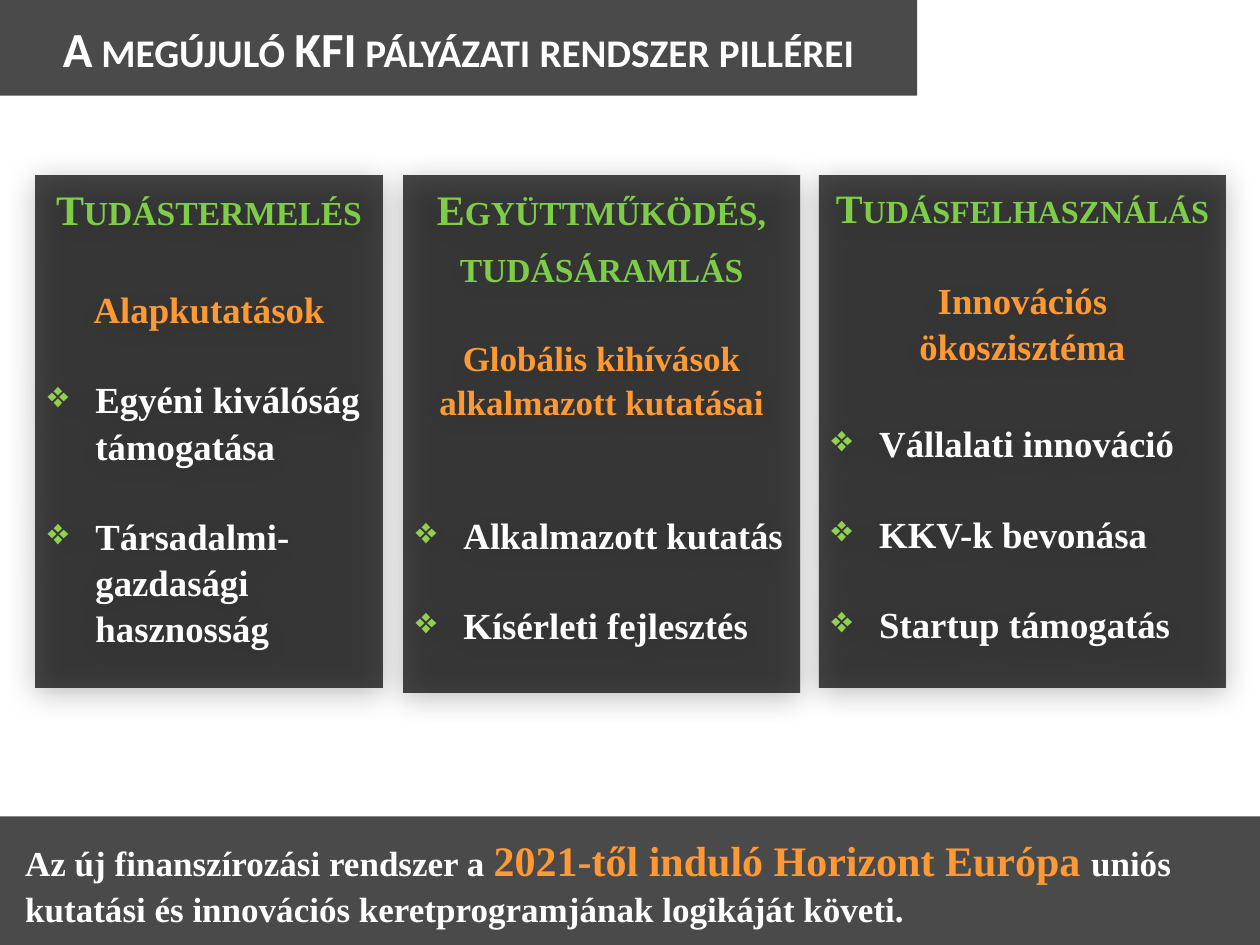
from lxml.etree import SubElement
from pptx import Presentation
from pptx.dml.color import RGBColor
from pptx.enum.shapes import MSO_SHAPE
from pptx.enum.text import MSO_ANCHOR, PP_ALIGN
from pptx.oxml.ns import qn
from pptx.util import Inches, Pt

COLORS = {"panel": "000000", "white": "FFFFFF", "green": "7DCE46",
          "orange": "FF9933", "bullet": "92D050"}
SERIF, SANS = "Times New Roman", "Calibri"

TITLE = "A megújuló KFI pályázati rendszer pillérei"
FOOTER = [
    ("Az új finanszírozási rendszer a ", 20, "white"),
    ("2021-től induló Horizont Európa ", 24, "orange"),
    ("uniós kutatási és innovációs keretprogramjának logikáját követi.", 20, "white"),
]
PILLARS = [
    {"box": (0.28, 1.39, 2.76, 4.07),
     "heading": ["Tudástermelés"], "heading_size": 24,
     "topic": "Alapkutatások", "topic_size": 21, "gaps": (29, 25),
     "items": ["Egyéni kiválóság támogatása", "Társadalmi-gazdasági hasznosság"]},
    {"box": (3.2, 1.39, 3.15, 4.11),
     "heading": ["Együttműködés,", "tudásáramlás"], "heading_size": 24,
     "topic": "Globális kihívások alkalmazott kutatásai", "topic_size": 20, "gaps": (25, 50),
     "items": ["Alkalmazott kutatás", "Kísérleti fejlesztés"]},
    {"box": (6.5, 1.39, 3.23, 4.07),
     "heading": ["Tudásfelhasználás"], "heading_size": 23,
     "topic": "Innovációs ökoszisztéma", "topic_size": 21, "gaps": (25, 29),
     "items": ["Vállalati innováció", "KKV-k bevonása", "Startup támogatás"]},
]
ITEM_SIZE, ITEM_GAP, HEADING_GAP = 21, 25, 2


def add_panel(s, box, anchor):
    sp = s.shapes.add_shape(MSO_SHAPE.RECTANGLE, *map(Inches, box))
    sp.shadow.inherit = False
    sp.fill.solid()
    sp.fill.fore_color.rgb = RGBColor.from_string(COLORS["panel"])
    color = sp._element.spPr.find(qn("a:solidFill"))[0]
    SubElement(color, qn("a:alpha"), val="71000")
    sp.line.fill.background()
    sp.text_frame.word_wrap = True
    sp.text_frame.vertical_anchor = anchor
    return sp


def add_shadow(sp):
    effects = sp._element.spPr.find(qn("a:effectLst"))
    shadow = SubElement(effects, qn("a:outerShdw"), blurRad=str(Pt(17)),
                        dist=str(Pt(3)), dir="5400000", rotWithShape="0")
    color = SubElement(shadow, qn("a:srgbClr"), val=COLORS["panel"])
    SubElement(color, qn("a:alpha"), val="36000")


def add_run(p, text, size, color, font=SERIF, small_caps=False):
    r = p.add_run()
    r.text = text
    for name, value in {"name": font, "size": Pt(size), "bold": True}.items():
        setattr(r.font, name, value)
    r.font.color.rgb = RGBColor.from_string(COLORS[color])
    if small_caps:
        r._r.get_or_add_rPr().set("cap", "small")


def add_bullet(p):
    pPr = p._p.get_or_add_pPr()
    pPr.set("marL", str(Inches(0.38)))
    pPr.set("indent", str(Inches(-0.38)))
    SubElement(SubElement(pPr, qn("a:buClr")), qn("a:srgbClr"), val=COLORS["bullet"])
    SubElement(pPr, qn("a:buChar"), char="❖")


def add_pillar(s, pillar):
    sp = add_panel(s, pillar["box"], MSO_ANCHOR.TOP)
    add_shadow(sp)
    topic_gap, list_gap = pillar["gaps"]
    lines = [(t, pillar["heading_size"], "green", HEADING_GAP) for t in pillar["heading"]]
    lines.append((pillar["topic"], pillar["topic_size"], "orange", topic_gap))
    lines += [(t, ITEM_SIZE, "white", ITEM_GAP if i else list_gap)
              for i, t in enumerate(pillar["items"])]
    tf = sp.text_frame
    for i, (text, size, color, gap) in enumerate(lines):
        p = tf.add_paragraph() if i else tf.paragraphs[0]
        is_item = color == "white"
        if is_item:
            add_bullet(p)
        p.alignment = PP_ALIGN.LEFT if is_item else PP_ALIGN.CENTER
        p.line_spacing = 1.05
        if i:
            p.space_before = Pt(gap)
        add_run(p, text, size, color, small_caps=color == "green")


def main():
    prs = Presentation()
    prs.slide_width, prs.slide_height = Inches(10), Inches(7.5)
    s = prs.slides.add_slide(prs.slide_layouts[6])

    title = add_panel(s, (0, 0, 7.28, 0.76), MSO_ANCHOR.MIDDLE)
    p = title.text_frame.paragraphs[0]
    p.alignment = PP_ALIGN.CENTER
    add_run(p, TITLE, 28, "white", SANS, small_caps=True)

    for pillar in PILLARS:
        add_pillar(s, pillar)

    footer = add_panel(s, (0, 6.48, 10, 1.02), MSO_ANCHOR.MIDDLE)
    footer.text_frame.margin_left = Inches(0.2)
    p = footer.text_frame.paragraphs[0]
    p.alignment = PP_ALIGN.LEFT
    p.line_spacing = 1.05
    for text, size, color in FOOTER:
        add_run(p, text, size, color)

    prs.save("out.pptx")


if __name__ == "__main__":
    main()
